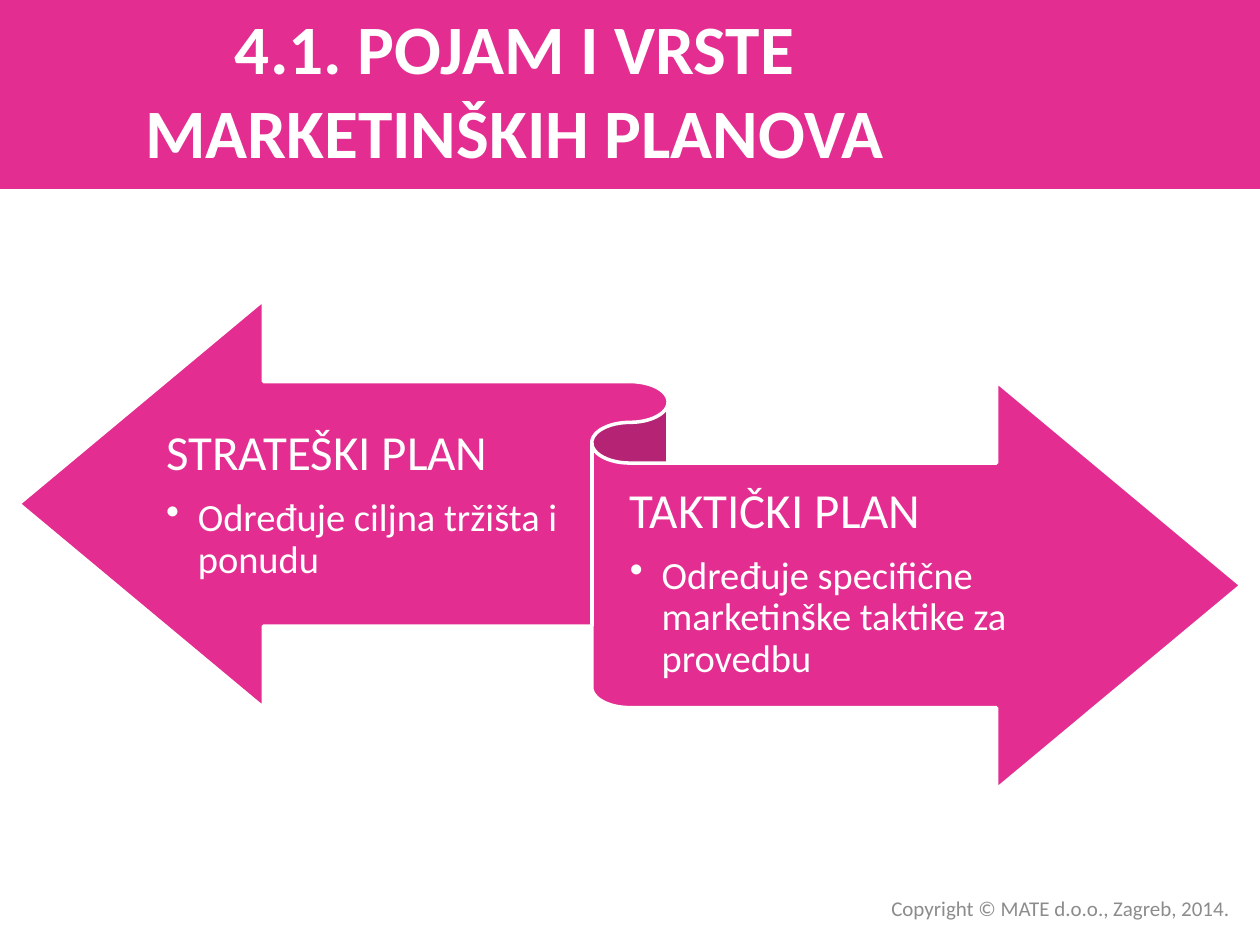
import dataclasses

import pptx
import pptx.dml.color
import pptx.enum.shapes
import pptx.enum.text
import pptx.oxml
import pptx.oxml.ns
import pptx.util

Cm = pptx.util.Cm
Pt = pptx.util.Pt
RGB = pptx.dml.color.RGBColor
Align = pptx.enum.text.PP_ALIGN
Preset = pptx.enum.shapes.MSO_SHAPE


@dataclasses.dataclass(frozen=True)
class Theme:
    font: str = "Calibri"
    pink: RGB = RGB(0xE3, 0x2D, 0x91)
    white: RGB = RGB(0xFF, 0xFF, 0xFF)
    grey: RGB = RGB(0x8C, 0x8C, 0x8C)
    title: float = 39.6
    heading: float = 28
    body: float = 22
    footer: float = 12


def apply(target, values):
    for name, value in values.items():
        setattr(target, name, value)


class SlideBuilder:
    def __init__(self, slide, theme):
        self.slide = slide
        self.theme = theme

    def panel(self, preset, box, outline=None):
        """Draw a pink preset shape, with a white outline if a width is given."""
        shape = self.slide.shapes.add_shape(preset, *map(Cm, box))
        shape.shadow.inherit = False
        shape.fill.solid()
        shape.fill.fore_color.rgb = self.theme.pink
        if outline is None:
            shape.line.fill.background()
        else:
            shape.line.color.rgb = self.theme.white
            shape.line.width = Pt(outline)

    def text_frame(self, box, insets=(0.25, 0.13, 0.25, 0.13)):
        frame = self.slide.shapes.add_textbox(*map(Cm, box)).text_frame
        left, top, right, bottom = map(Cm, insets)
        apply(frame, {
            "word_wrap": True,
            "vertical_anchor": pptx.enum.text.MSO_ANCHOR.MIDDLE,
            "margin_left": left, "margin_top": top,
            "margin_right": right, "margin_bottom": bottom,
        })
        return frame

    def fill_paragraph(self, paragraph, text, size, color, bold=False, **layout):
        paragraph.text = text
        apply(paragraph, layout)
        apply(paragraph.font, {"name": self.theme.font, "size": Pt(size), "bold": bold})
        paragraph.font.color.rgb = color

    def label(self, box, text, size, color, alignment, bold=False):
        paragraph = self.text_frame(box).paragraphs[0]
        self.fill_paragraph(paragraph, text, size, color, bold, alignment=alignment)

    def bullet(self, paragraph, indent):
        properties = paragraph._p.get_or_add_pPr()
        properties.set("marL", str(indent))
        properties.set("indent", str(-indent))
        mark = pptx.oxml.parse_xml(
            f'<a:buChar {pptx.oxml.ns.nsdecls("a")} char="•"/>')
        properties.append(mark)

    def plan(self, box, heading, description):
        """Add a plan's name with its bulleted description below."""
        theme = self.theme
        frame = self.text_frame(box, (0, 0.28, 0, 0.3))
        self.fill_paragraph(frame.paragraphs[0], heading, theme.heading, theme.white,
                            line_spacing=0.9, space_after=Pt(9.8))
        paragraph = frame.add_paragraph()
        self.bullet(paragraph, Cm(0.64))
        self.fill_paragraph(paragraph, description, theme.body, theme.white,
                            level=1, line_spacing=0.9, space_after=Pt(3.3))


def main():
    presentation = pptx.Presentation()
    presentation.slide_width = Cm(25.4)
    presentation.slide_height = Cm(19.05)
    slide = presentation.slides.add_slide(presentation.slide_layouts[6])
    theme = Theme()
    builder = SlideBuilder(slide, theme)

    builder.panel(Preset.RECTANGLE, (0, 0, 25.4, 3.81))
    builder.panel(Preset.LEFT_RIGHT_RIBBON, (0.38, 6.05, 24.64, 9.86), outline=2)
    builder.plan((3.35, 7.77, 8.13, 4.83), "STRATEŠKI PLAN",
                 "Određuje ciljna tržišta i ponudu")
    builder.plan((12.7, 9.35, 9.6, 4.83), "TAKTIČKI PLAN",
                 "Određuje specifične marketinške taktike za provedbu")
    builder.label((0, 0.2, 20.75, 3.18), "4.1. POJAM I VRSTE MARKETINŠKIH PLANOVA",
                  theme.title, theme.white, Align.CENTER, bold=True)
    builder.label((11.91, 17.93, 13.13, 0.76), "Copyright © MATE d.o.o., Zagreb, 2014.",
                  theme.footer, theme.grey, Align.RIGHT)

    presentation.save("out.pptx")


if __name__ == "__main__":
    main()
